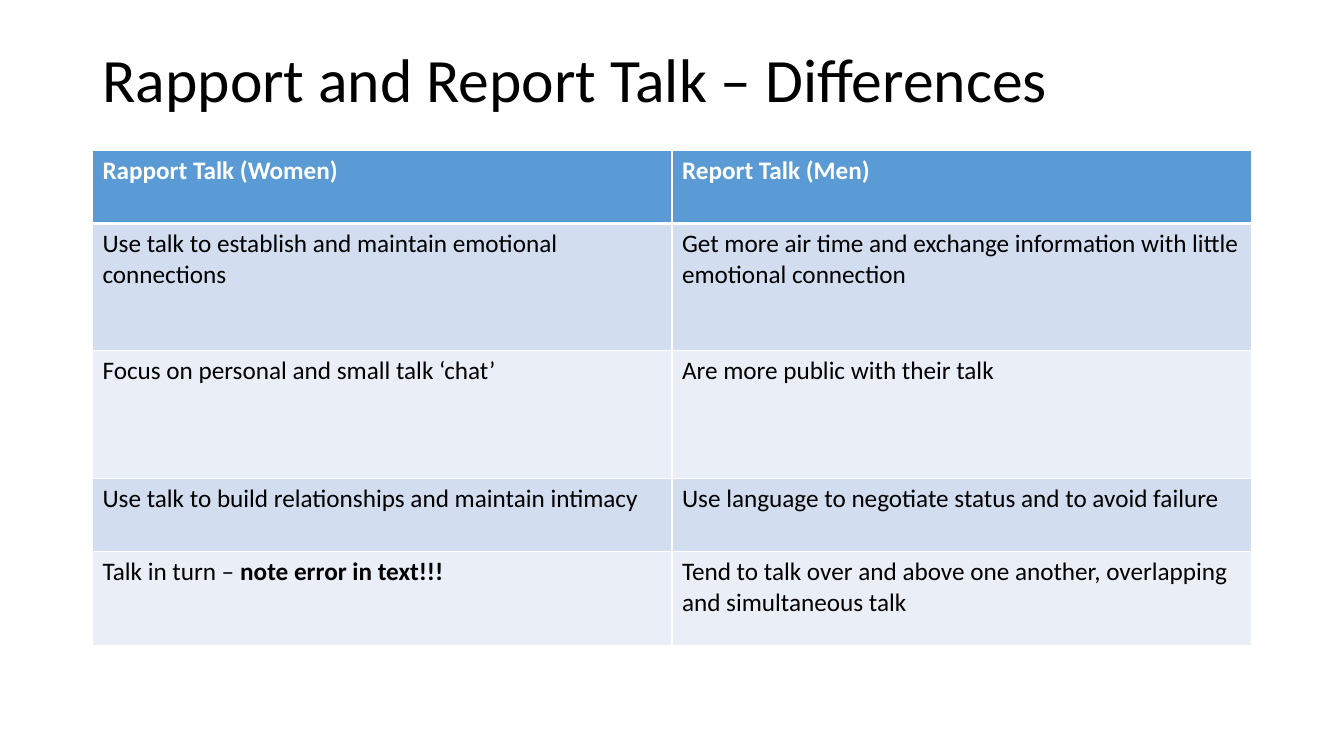
"""Build a slide with a table comparing rapport talk and report talk."""
import lxml.etree
import pptx
import pptx.dml.color
import pptx.enum.text
import pptx.oxml.ns
import pptx.util

Cm = pptx.util.Cm
Pt = pptx.util.Pt
COLORS = {
    "black": "000000",
    "white": "FFFFFF",
    "header": "5B9BD5",
    "odd_row": "D2DEEF",
    "even_row": "EAEFF7",
}
ROWS = [
    ("Rapport Talk (Women)", "Report Talk (Men)"),
    ("Use talk to establish and maintain emotional connections",
     "Get more air time and exchange information with little emotional connection"),
    ("Focus on personal and small talk ‘chat’", "Are more public with their talk"),
    ("Use talk to build relationships and maintain intimacy",
     "Use language to negotiate status and to avoid failure"),
    ("Talk in turn – ",
     "Tend to talk over and above one another, overlapping and simultaneous talk"),
]
ROW_HEIGHTS = [1.85, 3.21, 3.21, 1.85, 2.38]
LEFT, WIDTH = Cm(2.33), Cm(29.21)


def add_text(paragraph, text, size=18, color="black", bold=False):
    run = paragraph.add_run()
    run.text = text
    run.font.name = "Calibri"
    run.font.size = Pt(size)
    run.font.bold = bold
    run.font.color.rgb = pptx.dml.color.RGBColor.from_string(COLORS[color])


def add_border(cell, side, width):
    qn = pptx.oxml.ns.qn
    properties = cell._tc.get_or_add_tcPr()
    line = lxml.etree.SubElement(properties, qn(f"a:ln{side}"), w=str(Pt(width)))
    fill = lxml.etree.SubElement(line, qn("a:solidFill"))
    lxml.etree.SubElement(fill, qn("a:srgbClr"), val=COLORS["white"])


presentation = pptx.Presentation()
presentation.slide_width = Cm(33.87)
presentation.slide_height = Cm(19.05)
slide = presentation.slides.add_slide(presentation.slide_layouts[5])

title = slide.shapes.title
title.left, title.top, title.width, title.height = LEFT, Cm(1.02), WIDTH, Cm(2.11)
title.text_frame.vertical_anchor = pptx.enum.text.MSO_ANCHOR.MIDDLE
title.text_frame.auto_size = pptx.enum.text.MSO_AUTO_SIZE.NONE
heading = title.text_frame.paragraphs[0]
heading.alignment = pptx.enum.text.PP_ALIGN.LEFT
heading.line_spacing = 0.9
add_text(heading, "Rapport and Report Talk – Differences", size=44)

table = slide.shapes.add_table(
    len(ROWS), 2, LEFT, Cm(3.78), WIDTH, Cm(sum(ROW_HEIGHTS))
).table
for row_index, (texts, height) in enumerate(zip(ROWS, ROW_HEIGHTS)):
    table.rows[row_index].height = Cm(height)
    is_header = row_index == 0
    row_fill = "header" if is_header else "odd_row" if row_index % 2 else "even_row"
    for column_index, text in enumerate(texts):
        cell = table.cell(row_index, column_index)
        add_text(cell.text_frame.paragraphs[0], text,
                 color="white" if is_header else "black", bold=is_header)
        for side in "LRTB":
            under_header = (row_index, side) in [(0, "B"), (1, "T")]
            add_border(cell, side, 3 if under_header else 1)
        cell.fill.solid()
        cell.fill.fore_color.rgb = pptx.dml.color.RGBColor.from_string(COLORS[row_fill])

add_text(table.cell(4, 0).text_frame.paragraphs[0], "note error in text!!!", bold=True)

presentation.save("out.pptx")
